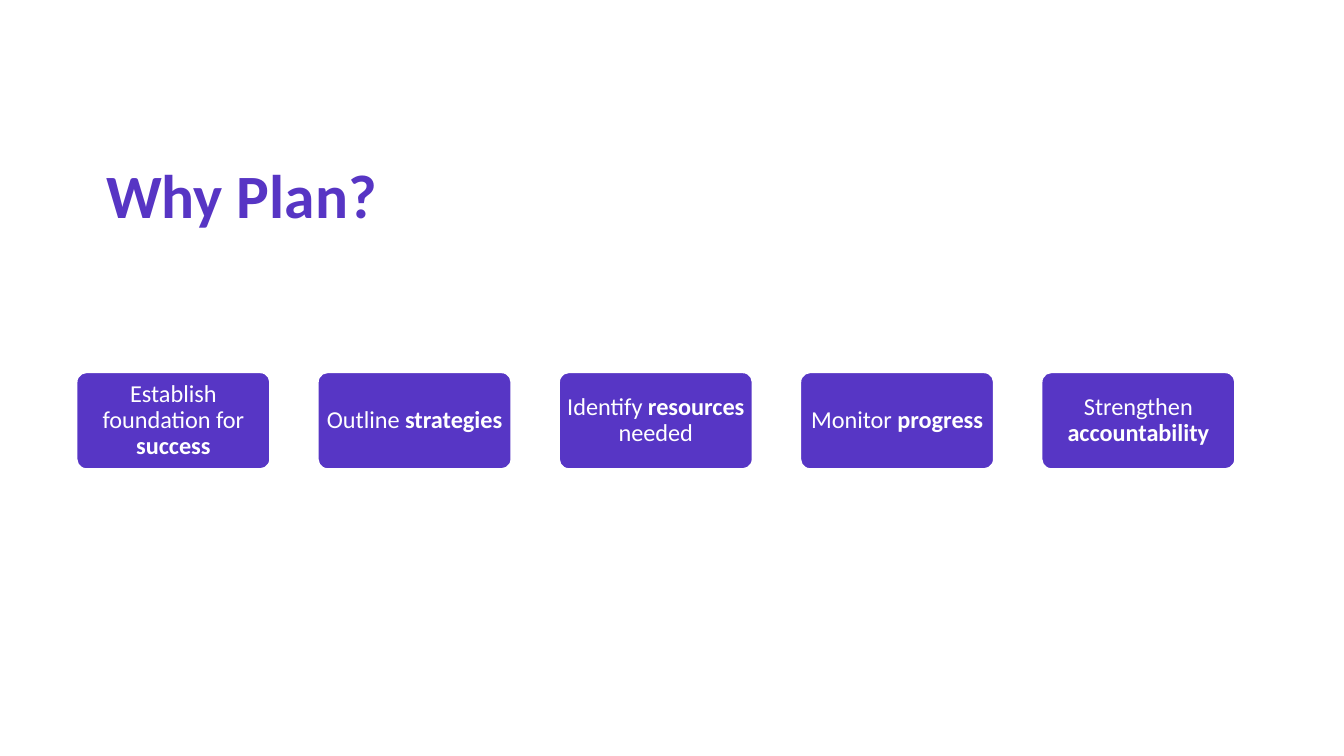
from dataclasses import dataclass

from pptx import Presentation
from pptx.dml.color import RGBColor
from pptx.enum.shapes import MSO_SHAPE
from pptx.enum.text import MSO_ANCHOR, PP_ALIGN
from pptx.util import Inches, Pt


@dataclass(frozen=True)
class Theme:
    font: str = "Calibri"
    title_color: RGBColor = RGBColor(0x57, 0x35, 0xC4)
    card_color: RGBColor = RGBColor(0x57, 0x36, 0xC5)
    white: RGBColor = RGBColor(0xFF, 0xFF, 0xFF)
    title_size: Pt = Pt(33)
    card_size: Pt = Pt(13)


theme = Theme()

# Each reason is a list of (text, bold) spans.
reasons = [
    [("Establish foundation for ", False), ("success", True)],
    [("Outline ", False), ("strategies", True)],
    [("Identify ", False), ("resources", True), (" needed", False)],
    [("Monitor ", False), ("progress", True)],
    [("Strengthen ", False), ("accountability", True)],
]

# A 16:9 page
deck = Presentation()
deck.slide_width = Inches(10)
deck.slide_height = Inches(10 * 9 / 16)
page = deck.slides.add_slide(deck.slide_layouts[5])

# Title
title = page.shapes.title
title.left, title.top = Inches(0.69), Inches(1.18)
title.width, title.height = Inches(8.62), Inches(0.59)
title.text_frame.vertical_anchor = MSO_ANCHOR.MIDDLE
para = title.text_frame.paragraphs[0]
para.text = "Why Plan?"
para.alignment = PP_ALIGN.LEFT
para.line_spacing = 0.9
para.font.name = theme.font
para.font.size = theme.title_size
para.font.bold = True
para.font.color.rgb = theme.title_color

# Row of evenly spaced reason cards
row_left, row_top, row_width = Inches(0.57), Inches(2.77), Inches(8.62)
card_width, card_height = Inches(1.44), Inches(0.72)
pitch = (row_width - card_width) // (len(reasons) - 1)

for index, spans in enumerate(reasons):
    card = page.shapes.add_shape(
        MSO_SHAPE.ROUNDED_RECTANGLE,
        row_left + index * pitch, row_top, card_width, card_height,
    )
    card.adjustments[0] = 0.1
    card.shadow.inherit = False
    card.fill.solid()
    card.fill.fore_color.rgb = theme.card_color
    card.line.color.rgb = theme.white
    card.line.width = Pt(1)

    frame = card.text_frame
    frame.word_wrap = True
    frame.vertical_anchor = MSO_ANCHOR.MIDDLE
    frame.margin_left = frame.margin_right = Inches(0.03)
    frame.margin_top = frame.margin_bottom = Inches(0.02)

    para = frame.paragraphs[0]
    para.alignment = PP_ALIGN.CENTER
    para.line_spacing = 0.9
    para.font.name = theme.font
    para.font.size = theme.card_size
    para.font.color.rgb = theme.white
    for text, bold in spans:
        span = para.add_run()
        span.text = text
        span.font.bold = bold

deck.save("out.pptx")
